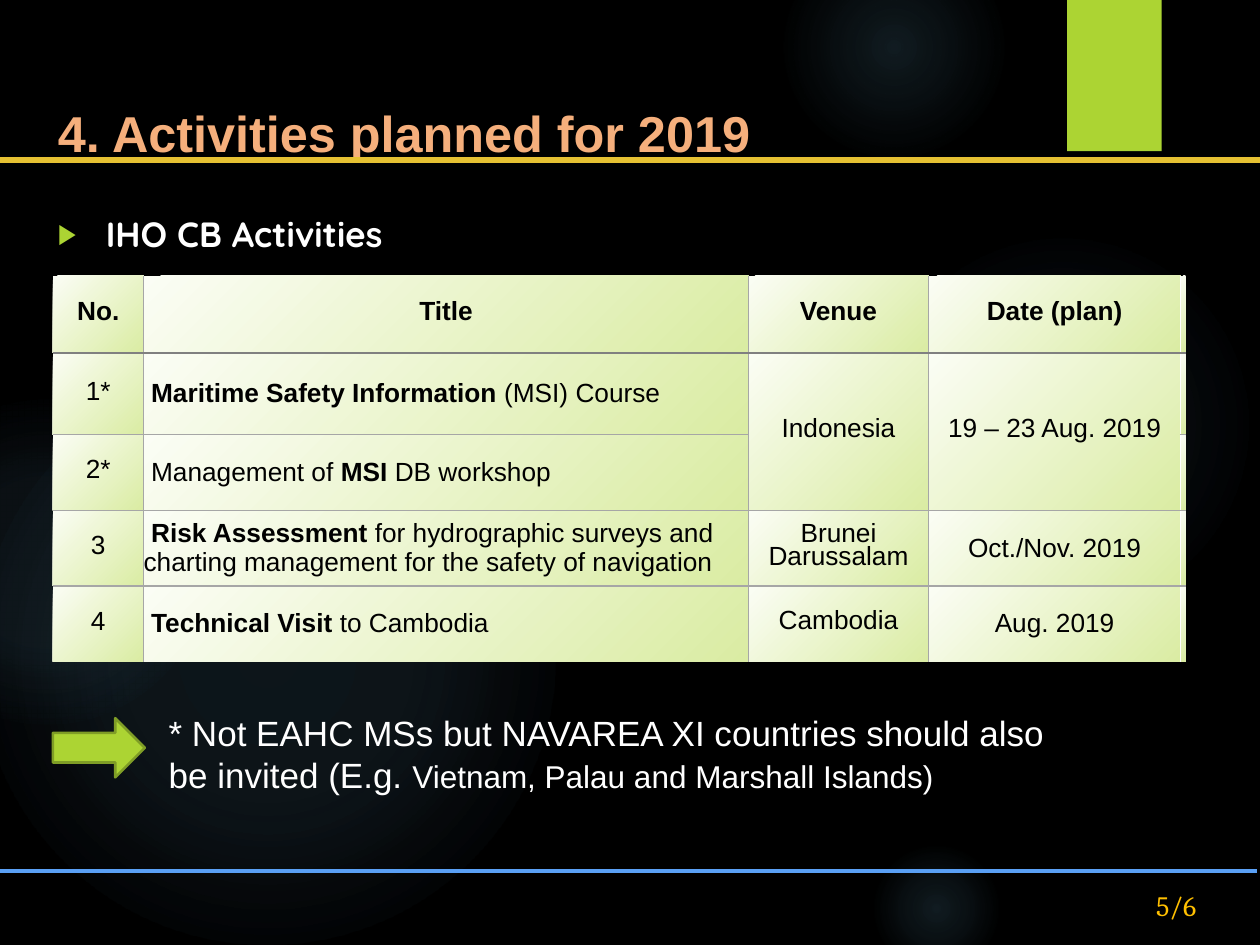
from lxml import etree
from pptx import Presentation
from pptx.dml.color import RGBColor
from pptx.enum.shapes import MSO_CONNECTOR, MSO_SHAPE
from pptx.enum.text import MSO_ANCHOR, MSO_AUTO_SIZE, PP_ALIGN
from pptx.oxml.ns import qn
from pptx.util import Inches, Pt

LEFT, CENTER = PP_ALIGN.LEFT, PP_ALIGN.CENTER
TOP, MIDDLE = MSO_ANCHOR.TOP, MSO_ANCHOR.MIDDLE
NO_AUTOFIT = MSO_AUTO_SIZE.NONE
OVAL, RECTANGLE, RIGHT_ARROW = MSO_SHAPE.OVAL, MSO_SHAPE.RECTANGLE, MSO_SHAPE.RIGHT_ARROW
STRAIGHT = MSO_CONNECTOR.STRAIGHT
WIDTH, HEIGHT = 10, 7.5
NO_TABLE_STYLE = "{2D5ABB26-0587-4C30-8999-92F81FD0307C}"
COLORS = {
    "background": "000000", "glow": "7AC4F0", "green": "ACD433", "green_edge": "7F9D26",
    "title": "F5AF7C", "gold": "E6C133", "blue": "5AA0F5", "white": "FFFFFF",
    "black": "000000", "page": "FFC000", "cell_light": "FBFDF5", "cell_dark": "DAECA3",
    "grid": "A6A6A6", "header_rule": "808080",
}
# left, top, diameter, gradient stops as (position %, opacity %)
GLOWS = [
    (6.89, 1.83, 3.08, [(0, 7), (36, 6), (69, 0)]),
    (6.22, -0.5, 1.75, [(0, 14), (36, 7), (73, 0)]),
    (6.89, 6.67, 1.08, [(0, 14), (36, 7), (66, 0)]),
    (-0.17, 2.92, 4.58, [(0, 11), (36, 10), (75, 0)]),
    (-0.92, 3.17, 2.58, [(0, 8), (36, 8), (72, 0)]),
]
COLUMN_WIDTHS = [0.72, 4.8, 1.43, 2, 0.03]
ROW_HEIGHTS = [0.61, 0.65, 0.6, 0.6, 0.6]
TITLE_COLUMN, VENUE_COLUMN, DATE_COLUMN = 1, 2, 3
# Text between ** marks is bold.
ACTIVITIES = [
    ["**No.**", "**Title**", "**Venue**", "**Date (plan)**"],
    ["1*", "**Maritime Safety Information** (MSI) Course", "Indonesia", "19 – 23 Aug. 2019"],
    ["2*", "Management of **MSI** DB workshop", "", ""],
    ["3", "**Risk Assessment** for hydrographic surveys and charting management "
          "for the safety of navigation", "Brunei Darussalam", "Oct./Nov. 2019"],
    ["4", "**Technical Visit** to Cambodia", "Cambodia", "Aug. 2019"],
]


def rgb(name):
    return RGBColor.from_string(COLORS[name])


def box(*lengths):
    return [Inches(length) for length in lengths]


def add_element(parent, tag, **attributes):
    element = etree.SubElement(parent, qn(tag))
    for name, value in attributes.items():
        element.set(name, str(value))
    return element


def write_text(frame, *lines, size, color, font="Arial", bold=False, align=LEFT,
               spacing=None, anchor=TOP, accent_size=None):
    """Write one paragraph per line; ** marks switch to bold, or to accent_size if given."""
    frame.word_wrap = True
    frame.vertical_anchor = anchor
    for index, line in enumerate(lines):
        paragraph = frame.add_paragraph() if index else frame.paragraphs[0]
        paragraph.alignment = align
        if spacing:
            paragraph.line_spacing = spacing
        for part, text in enumerate(line.split("**")):
            if not text:
                continue
            accented = part % 2 == 1
            run = paragraph.add_run()
            run.text = text
            run.font.name = font
            run.font.size = Pt(accent_size if accented and accent_size else size)
            run.font.bold = bold or (accented and not accent_size)
            run.font.color.rgb = rgb(color)


def add_gradient(parent, stops, angle=None):
    """Append a gradient of (position, colour, opacity); radial when no angle is given."""
    gradient = add_element(parent, "a:gradFill", rotWithShape=1)
    stop_list = add_element(gradient, "a:gsLst")
    for position, color, opacity in stops:
        stop = add_element(stop_list, "a:gs", pos=position * 1000)
        fill = add_element(stop, "a:srgbClr", val=COLORS[color])
        add_element(fill, "a:alpha", val=opacity * 1000)
    if angle is None:
        radial = add_element(gradient, "a:path", path="circle")
        add_element(radial, "a:fillToRect", l=50000, t=50000, r=50000, b=50000)
    else:
        add_element(gradient, "a:lin", ang=angle * 60000, scaled=0)
    return gradient


def add_glow(slide, left, top, diameter, stops):
    shape = slide.shapes.add_shape(OVAL, *box(left, top, diameter, diameter))
    shape.shadow.inherit = False
    shape.line.fill.background()
    properties = shape._element.spPr
    gradient = add_gradient(properties, [(at, "glow", opacity) for at, opacity in stops])
    properties.find(qn("a:prstGeom")).addnext(gradient)
    slide.shapes._spTree.insert(2, shape._element)  # behind the placeholders


def add_solid(slide, kind, area, fill, line=None):
    shape = slide.shapes.add_shape(kind, *box(*area))
    shape.shadow.inherit = False
    shape.fill.solid()
    shape.fill.fore_color.rgb = rgb(fill)
    if line:
        shape.line.color.rgb = rgb(line)
        shape.line.width = Pt(1.5)
    else:
        shape.line.fill.background()


def add_rule(slide, left, top, color, weight):
    rule = slide.shapes.add_connector(STRAIGHT, *box(left, top, left + WIDTH, top))
    rule.line.color.rgb = rgb(color)
    rule.line.width = Pt(weight)
    add_element(rule._element.spPr, "a:effectLst")


def place(placeholder, *area):
    placeholder.left, placeholder.top, placeholder.width, placeholder.height = box(*area)
    placeholder.text_frame.auto_size = NO_AUTOFIT
    return placeholder.text_frame


def add_bullet(paragraph, indent):
    properties = paragraph._p.get_or_add_pPr()
    properties.set("marL", str(Inches(indent)))
    properties.set("indent", str(-Inches(indent)))
    bullet_color = add_element(properties, "a:buClr")
    add_element(bullet_color, "a:srgbClr", val=COLORS["green"])
    add_element(properties, "a:buSzPct", val=80000)
    add_element(properties, "a:buFont", typeface="Arial")
    add_element(properties, "a:buChar", char="▶")


def style_cell(cell, row, column):
    """Draw the inner borders and the diagonal green fill."""
    last_row, last_column = len(ROW_HEIGHTS) - 1, len(COLUMN_WIDTHS) - 1
    borders = {
        "L": column > 0 and ("white" if column == last_column else "grid"),
        "R": column < last_column and ("white" if column == DATE_COLUMN else "grid"),
        "T": row > 0 and ("header_rule" if row == 1 else "grid"),
        "B": row < last_row and ("header_rule" if row == 0 else "grid"),
    }
    properties = cell._tc.get_or_add_tcPr()
    for side, color in borders.items():
        if color:
            line = add_element(properties, f"a:ln{side}", w=Pt(1))
            add_element(add_element(line, "a:solidFill"), "a:srgbClr", val=COLORS[color])
    add_gradient(properties, [(0, "cell_light", 100), (100, "cell_dark", 100)], angle=45)


def add_activity_table(slide):
    area = box(0.42, 2.19, sum(COLUMN_WIDTHS), sum(ROW_HEIGHTS))
    table = slide.shapes.add_table(len(ROW_HEIGHTS), len(COLUMN_WIDTHS), *area).table
    table.first_row = table.horz_banding = False
    table._tbl.tblPr.find(qn("a:tableStyleId")).text = NO_TABLE_STYLE
    for column, width in zip(table.columns, COLUMN_WIDTHS):
        column.width = Inches(width)
    for row, height in zip(table.rows, ROW_HEIGHTS):
        row.height = Inches(height)
    for column in (VENUE_COLUMN, DATE_COLUMN):
        table.cell(1, column).merge(table.cell(2, column))
    for row, texts in enumerate(ACTIVITIES):
        for column, text in enumerate(texts + [""]):
            cell = table.cell(row, column)
            cell.margin_left = cell.margin_right = cell.margin_top = cell.margin_bottom = 0
            cell.vertical_anchor = MIDDLE
            style_cell(cell, row, column)
            if not text:
                continue
            is_title = row > 0 and column == TITLE_COLUMN
            natural = is_title or (row > 2 and column == DATE_COLUMN)
            write_text(cell.text_frame, text, size=15, color="black", anchor=MIDDLE,
                       align=LEFT if is_title else CENTER,
                       spacing=None if natural else Pt(13.6 if row and not column else 13.3))
            if is_title:
                properties = cell.text_frame.paragraphs[0]._p.get_or_add_pPr()
                properties.set("indent", str(Inches(0.06)))


def main():
    presentation = Presentation()
    presentation.slide_width, presentation.slide_height = box(WIDTH, HEIGHT)
    slide = presentation.slides.add_slide(presentation.slide_layouts[1])
    slide.background.fill.solid()
    slide.background.fill.fore_color.rgb = rgb("background")
    for glow in GLOWS:
        add_glow(slide, *glow)
    add_solid(slide, RECTANGLE, (8.47, 0, 0.75, 1.2), "green")

    title = place(slide.shapes.title, 0.36, 0.48, 8.14, 0.67)
    title.margin_top = Inches(0.09)
    write_text(title, "4. Activities planned for 2019", size=28.8, color="title",
               bold=True, spacing=1.5)
    add_rule(slide, 0, 1.27, "gold", 3)
    add_rule(slide, -0.02, 6.91, "blue", 2.25)

    body = place(slide.placeholders[1], 0.36, 1.64, 8.66, 0.56)
    write_text(body, "IHO CB Activities", size=20, color="white", font="Quicksand", bold=True)
    body.paragraphs[0].space_before = Pt(0)
    add_bullet(body.paragraphs[0], 0.38)

    add_activity_table(slide)
    add_solid(slide, RIGHT_ARROW, (0.42, 5.7, 0.73, 0.47), "green", line="green_edge")
    note = slide.shapes.add_textbox(*box(1.24, 5.6, 7.28, 0.77))
    write_text(note.text_frame, "* Not EAHC MSs but NAVAREA XI countries should also",
               "be invited (E.g. **Vietnam, Palau and Marshall Islands)**",
               size=20, color="white", accent_size=18)
    page = slide.shapes.add_textbox(*box(8.8, 7, 1.07, 0.37))
    write_text(page.text_frame, "5/6", size=16, color="page", font="Cambria", align=CENTER)
    presentation.save("out.pptx")


if __name__ == "__main__":
    main()
